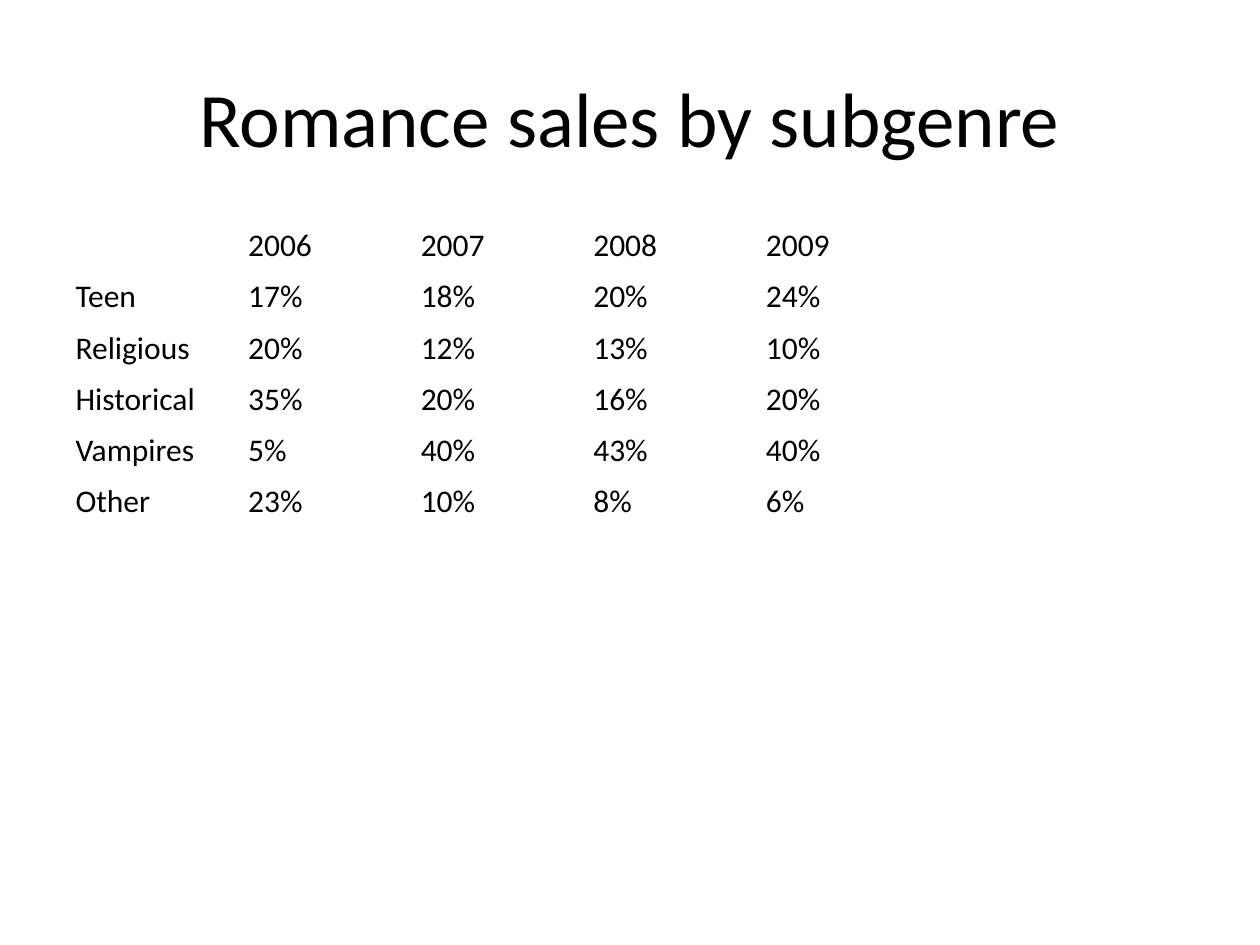
from pptx import Presentation
from pptx.dml.color import RGBColor
from pptx.enum.text import MSO_ANCHOR, PP_ALIGN
from pptx.util import Inches, Pt

CENTER = PP_ALIGN.CENTER
MIDDLE = MSO_ANCHOR.MIDDLE
TITLE_ONLY = 5

SALES = [
    ["", "2006", "2007", "2008", "2009"],
    ["Teen", "17%", "18%", "20%", "24%"],
    ["Religious", "20%", "12%", "13%", "10%"],
    ["Historical", "35%", "20%", "16%", "20%"],
    ["Vampires", "5%", "40%", "43%", "40%"],
    ["Other", "23%", "10%", "8%", "6%"],
]


def color(hex_text):
    return RGBColor.from_string(hex_text)


class SlideBuilder:
    font = "Calibri"
    ink = "000000"
    paper = "FFFFFF"
    title_size = 44
    body_size = 18

    def __init__(self, deck):
        self.deck = deck
        self.page = deck.slides.add_slide(deck.slide_layouts[TITLE_ONLY])
        fill = self.page.background.fill
        fill.solid()
        fill.fore_color.rgb = color(self.paper)

    def area(self, left, top, width, height):
        across, down = self.deck.slide_width, self.deck.slide_height
        return [round(share * side) for share, side in
                zip((left, top, width, height), (across, down, across, down))]

    def add_text(self, para, text, size):
        para.font.size = Pt(size)
        if text:
            span = para.add_run()
            span.text = text
            span.font.name = self.font
            span.font.size = Pt(size)
            span.font.color.rgb = color(self.ink)

    def title(self, text, *shares):
        box = self.page.shapes.title
        box.left, box.top, box.width, box.height = self.area(*shares)
        box.text_frame.vertical_anchor = MIDDLE
        para = box.text_frame.paragraphs[0]
        para.alignment = CENTER
        self.add_text(para, text, self.title_size)

    def table(self, rows, *shares):
        frame = self.page.shapes.add_table(
            len(rows), len(rows[0]), *self.area(*shares))
        table = frame.table
        table.first_row = False
        table.horz_banding = False
        for row, texts in zip(table.rows, rows):
            for cell, text in zip(row.cells, texts):
                cell.fill.background()
                self.add_text(cell.text_frame.paragraphs[0], text, self.body_size)


def main():
    deck = Presentation()
    deck.slide_width, deck.slide_height = Inches(10), Inches(7.5)
    builder = SlideBuilder(deck)
    builder.title("Romance sales by subgenre", 0.05, 0.04, 0.9, 1 / 6)
    builder.table(SALES, 0.05, 1.75 / 7.5, 6.85 / 10, 2.43 / 7.5)
    deck.save("out.pptx")


if __name__ == "__main__":
    main()
